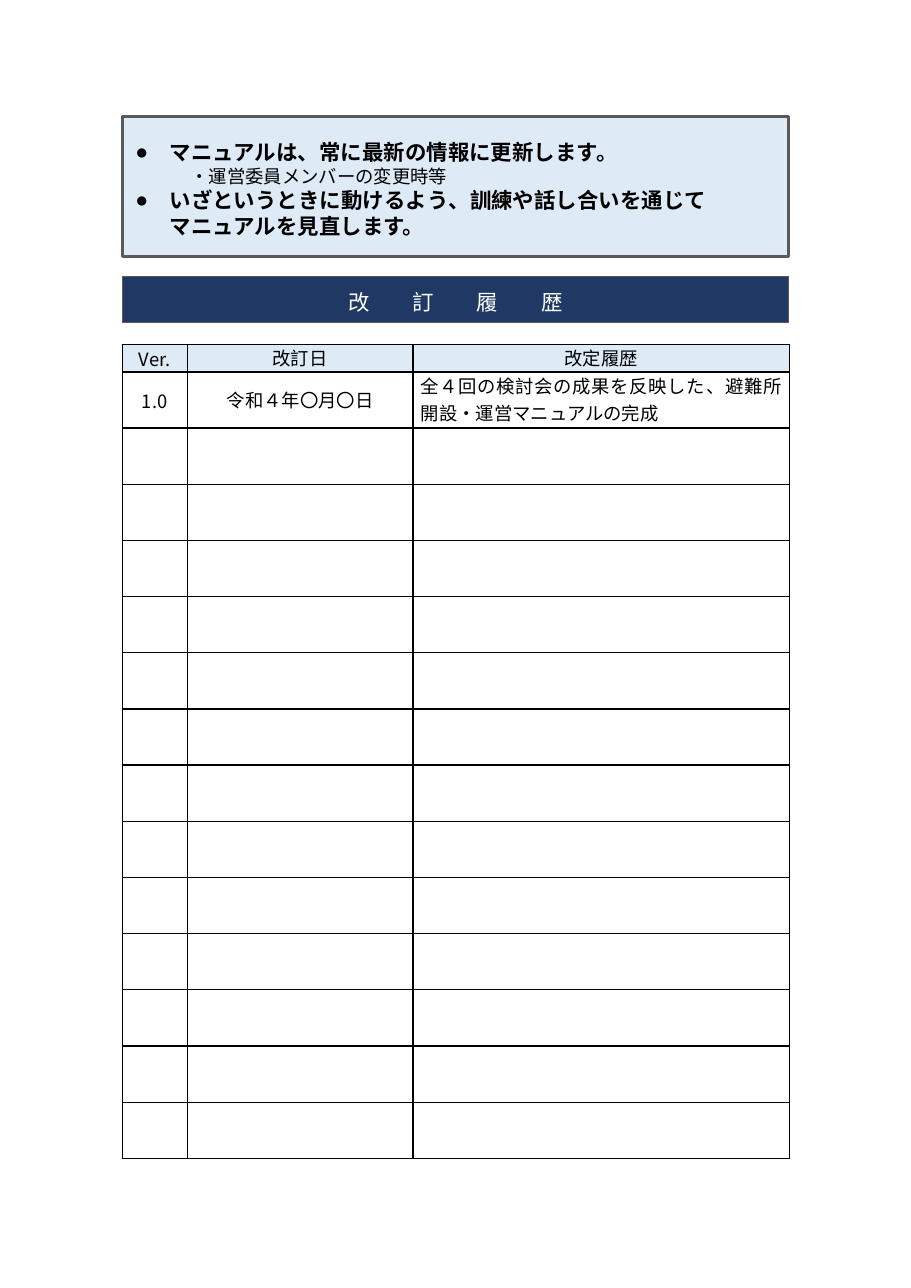
"""Build the manual revision history page."""
from lxml.etree import SubElement
from pptx import Presentation
from pptx.dml.color import RGBColor
from pptx.enum.shapes import MSO_SHAPE
from pptx.enum.text import MSO_ANCHOR, PP_ALIGN
from pptx.oxml.ns import qn
from pptx.util import Inches, Pt

WIDTH, HEIGHT = 8.27, 11.69
LEFT, CONTENT_WIDTH = 1.11, 6.05
PALE_BLUE = RGBColor(0xDE, 0xEA, 0xF6)
NAVY = RGBColor(0x20, 0x38, 0x64)
GRAY = RGBColor(0x5A, 0x5A, 0x5A)
BLACK = RGBColor(0, 0, 0)
WHITE = RGBColor(255, 255, 255)
BODY_FONT, VERSION_FONT, TABLE_FONT = "Arial", "Noto Sans CJK JP", "TeX Gyre Schola"

NOTICE = [
    ("マニュアルは、常に最新の情報に更新します。", True),
    ("・運営委員メンバーの変更時等", False),
    ("いざというときに動けるよう、訓練や話し合いを通じて\nマニュアルを見直します。", True),
]
TITLE = "改訂履歴"
HISTORY = [
    ("Ver.", "改訂日", "改定履歴"),
    ("1.0", "令和４年〇月〇日", "全４回の検討会の成果を反映した、避難所開設・運営マニュアルの完成"),
]
EMPTY_ROWS = 13
COLUMN_WIDTHS = (0.59, 2.05, 3.42)
HEADER_HEIGHT, ROW_HEIGHT = 0.24, 0.51


def style_paragraph(paragraph, name, size, color, bold=False):
    font = paragraph.font
    font.name, font.size, font.bold = name, Pt(size), bold
    font.color.rgb = color
    properties = paragraph._p.get_or_add_pPr().find(qn("a:defRPr"))
    SubElement(properties, qn("a:ea"), typeface=name)
    return properties


def set_margins(target, left, top, right, bottom):
    target.margin_left, target.margin_top = Inches(left), Inches(top)
    target.margin_right, target.margin_bottom = Inches(right), Inches(bottom)


def add_panel(slide, top, height, fill, line_width, margins):
    panel = slide.shapes.add_shape(MSO_SHAPE.RECTANGLE, Inches(LEFT), Inches(top),
                                   Inches(CONTENT_WIDTH), Inches(height))
    panel.shadow.inherit = False
    panel.fill.solid()
    panel.fill.fore_color.rgb = fill
    panel.line.color.rgb = GRAY
    panel.line.width = Pt(line_width)
    frame = panel.text_frame
    frame.word_wrap = True
    frame.vertical_anchor = MSO_ANCHOR.MIDDLE
    set_margins(frame, *margins)
    return frame


def indent(paragraph, margin, hanging=0.0, bullet=None):
    properties = paragraph._p.get_or_add_pPr()
    properties.set("marL", str(Inches(margin)))
    properties.set("indent", str(-Inches(hanging)))
    if bullet:
        SubElement(properties, qn("a:buFont"), typeface=BODY_FONT)
        SubElement(properties, qn("a:buChar"), char=bullet)


def add_notice(slide):
    frame = add_panel(slide, 1.06, 1.27, PALE_BLUE, 2.25, (0.12, 0.05, 0.16, 0.01))
    for index, (text, is_main) in enumerate(NOTICE):
        paragraph = frame.add_paragraph() if index else frame.paragraphs[0]
        paragraph.text = text
        paragraph.alignment = PP_ALIGN.LEFT
        if is_main:
            indent(paragraph, 0.31, 0.31, "●")
        else:
            indent(paragraph, 0.5)
        style_paragraph(paragraph, BODY_FONT, 14 if is_main else 12, BLACK, is_main)


def add_title(slide):
    frame = add_panel(slide, 2.51, 0.42, NAVY, 0.75, (0.08, 0.01, 0.08, 0.01))
    paragraph = frame.paragraphs[0]
    paragraph.text = TITLE
    paragraph.alignment = PP_ALIGN.CENTER
    paragraph.line_spacing = Pt(20)
    style_paragraph(paragraph, BODY_FONT, 14, WHITE).set("spc", "2800")


def add_borders(cell):
    properties = cell._tc.get_or_add_tcPr()
    for position, side in enumerate(("lnL", "lnR", "lnT", "lnB")):
        line = properties.makeelement(qn(f"a:{side}"), {"w": str(Pt(1))})
        fill = SubElement(line, qn("a:solidFill"))
        SubElement(fill, qn("a:srgbClr"), val=str(BLACK))
        properties.insert(position, line)


def add_history(slide):
    rows = HISTORY + [("", "", "")] * EMPTY_ROWS
    heights = [HEADER_HEIGHT] + [ROW_HEIGHT] * (len(rows) - 1)
    table = slide.shapes.add_table(len(rows), len(COLUMN_WIDTHS), Inches(LEFT), Inches(3.13),
                                   Inches(sum(COLUMN_WIDTHS)), Inches(sum(heights))).table
    table.horz_banding = False
    for column, width in zip(table.columns, COLUMN_WIDTHS):
        column.width = Inches(width)
    for row_index, (values, height) in enumerate(zip(rows, heights)):
        table.rows[row_index].height = Inches(height)
        for column_index, value in enumerate(values):
            cell = table.cell(row_index, column_index)
            cell.vertical_anchor = MSO_ANCHOR.MIDDLE
            set_margins(cell, 0.07, 0, 0.07, 0)
            cell.fill.solid()
            cell.fill.fore_color.rgb = WHITE if row_index else PALE_BLUE
            add_borders(cell)
            if value:
                paragraph = cell.text_frame.paragraphs[0]
                paragraph.text = value
                is_description = row_index and column_index == 2
                paragraph.alignment = PP_ALIGN.JUSTIFY if is_description else PP_ALIGN.CENTER
                style_paragraph(paragraph, TABLE_FONT if column_index else VERSION_FONT, 12, BLACK)


def main():
    presentation = Presentation()
    presentation.slide_width, presentation.slide_height = Inches(WIDTH), Inches(HEIGHT)
    slide = presentation.slides.add_slide(presentation.slide_layouts[6])
    add_history(slide)
    add_notice(slide)
    add_title(slide)
    presentation.save("out.pptx")


if __name__ == "__main__":
    main()
